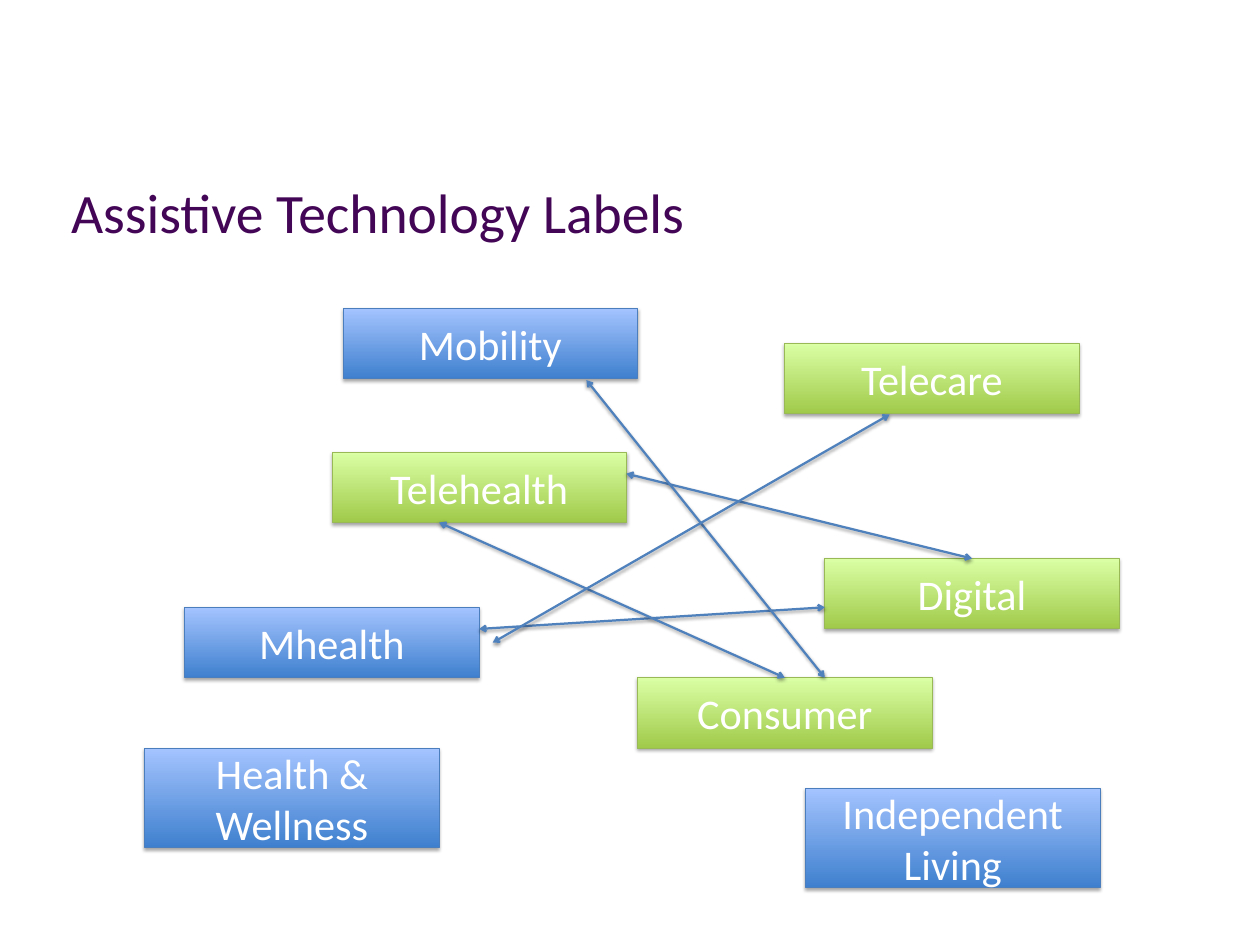
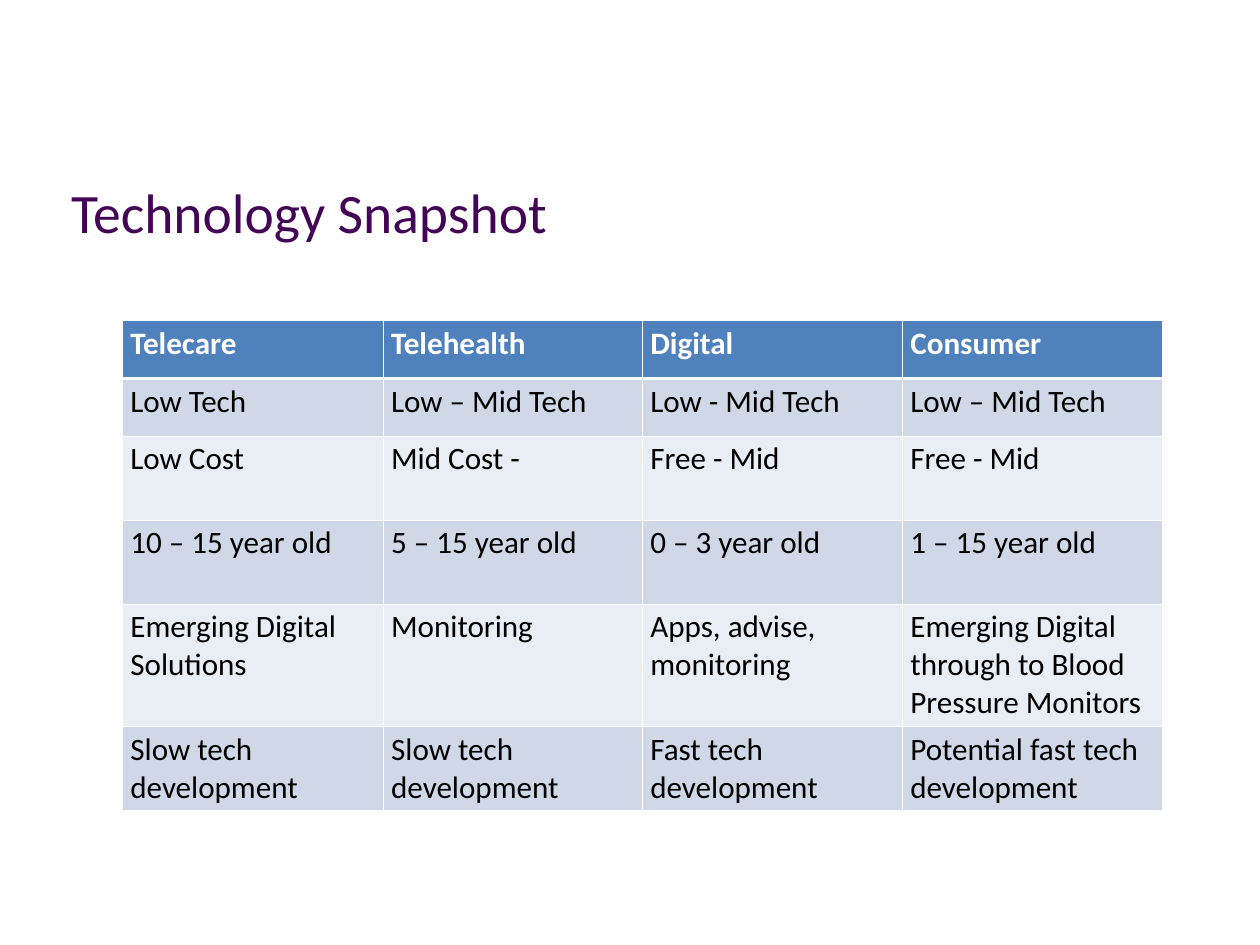
import pptx
import pptx.util
import pptx.dml.color
import pptx.enum.shapes
import pptx.enum.text
import pptx.oxml
import pptx.oxml.ns
from pptx.util import Inches

THEME = {
    "font": "Calibri",
    "title": {"size": 50, "color": "430556", "bold": False},
    "label": {"size": 38, "color": "FFFFFF", "bold": False},
    "header": {"size": 28, "color": "FFFFFF", "bold": True},
    "body": {"size": 28, "color": "000000", "bold": False},
    "blue": {"stops": ("3F80CE", "A4C4FF"), "line": "4B7EBC"},
    "green": {"stops": ("A0CA4A", "DAFFA5"), "line": "98B955"},
    "arrow": "4F81BD",
    "header_fill": "4F81BD",
    "band_fills": ("D0D8E8", "E9EDF4"),
    "border": "FFFFFF",
}

SLIDE_SIZE = (15.75, 11.81)
TITLE_AREA = (0.79, 2.04, 14.17, 1.2)

LABEL_WIDTH = 3.68
ONE_LINE, TWO_LINES = 0.88, 1.24
# text, palette, left, top, height
LABELS = [
    ("Mobility", "blue", 4.29, 3.85, ONE_LINE),
    ("Telecare", "green", 9.81, 4.29, ONE_LINE),
    ("Telehealth", "green", 4.15, 5.65, ONE_LINE),
    ("Digital", "green", 10.31, 6.98, ONE_LINE),
    ("Mhealth", "blue", 2.31, 7.59, ONE_LINE),
    ("Consumer", "green", 7.97, 8.47, ONE_LINE),
    ("Health & Wellness", "blue", 1.81, 9.35, TWO_LINES),
    ("Independent Living", "blue", 10.07, 9.85, TWO_LINES),
]
# start x, start y, end x, end y
ARROWS = [
    (5.99, 7.86, 10.31, 7.59),
    (7.83, 5.92, 12.15, 6.98),
    (5.49, 6.53, 9.81, 8.47),
    (7.33, 4.75, 10.31, 8.47),
    (6.16, 8.03, 11.12, 5.18),
]

TABLE_ORIGIN = (1.53, 4.01)
COLUMN_WIDTHS = (3.26, 3.24, 3.25, 3.25)
ROW_HEIGHTS = (0.72, 0.72, 1.05, 1.05, 1.53, 1.05)
SNAPSHOT = [
    ("Telecare", "Telehealth", "Digital", "Consumer"),
    ("Low Tech", "Low – Mid Tech", "Low - Mid Tech", "Low – Mid Tech"),
    ("Low Cost", "Mid Cost -", "Free - Mid", "Free - Mid"),
    ("10 – 15 year old", "5 – 15 year old", "0 – 3 year old", "1 – 15 year old"),
    ("Emerging Digital Solutions", "Monitoring", "Apps, advise, monitoring",
     "Emerging Digital through to Blood Pressure Monitors"),
    ("Slow tech development", "Slow tech development", "Fast tech development",
     "Potential fast tech development"),
]


def rgb(value):
    return pptx.dml.color.RGBColor.from_string(value)


def add_xml(parent, xml):
    """Append a DrawingML fragment whose first tag lacks its namespace."""
    tag, rest = xml.split(" ", 1)
    namespace = pptx.oxml.ns.nsdecls("a")
    parent.append(pptx.oxml.parse_xml(f"{tag} {namespace} {rest}"))


def write(frame, text, style, align=pptx.enum.text.PP_ALIGN.LEFT):
    frame.word_wrap = True
    para = frame.paragraphs[0]
    para.alignment = align
    span = para.add_run()
    span.text = text
    formats = {"name": THEME["font"], "size": pptx.util.Pt(style["size"]),
               "bold": style["bold"]}
    for name, value in formats.items():
        setattr(span.font, name, value)
    span.font.color.rgb = rgb(style["color"])


def set_line(shape, color, width):
    shape.line.color.rgb = rgb(color)
    shape.line.width = pptx.util.Pt(width)


def add_shadow(shape, opacity, distance):
    """Drop a soft black shadow straight down; call after fill and line."""
    blur, offset = pptx.util.Pt(3.1), pptx.util.Pt(distance)
    add_xml(shape.element.spPr, (
        '<a:effectLst >'
        f'<a:outerShdw blurRad="{blur}" dist="{offset}" dir="5400000" rotWithShape="0">'
        f'<a:srgbClr val="000000"><a:alpha val="{opacity * 1000}"/></a:srgbClr>'
        '</a:outerShdw></a:effectLst>'))


def add_titled_page(deck, title):
    page = deck.slides.add_slide(deck.slide_layouts[6])
    box = page.shapes.add_textbox(*map(Inches, TITLE_AREA))
    box.text_frame.vertical_anchor = pptx.enum.text.MSO_ANCHOR.MIDDLE
    write(box.text_frame, title, THEME["title"])
    return page


def add_label(page, text, palette_name, left, top, height):
    palette = THEME[palette_name]
    area = map(Inches, (left, top, LABEL_WIDTH, height))
    box = page.shapes.add_shape(pptx.enum.shapes.MSO_SHAPE.RECTANGLE, *area)
    box.fill.gradient()
    box.fill.gradient_angle = 90
    for stop, color in zip(box.fill.gradient_stops, palette["stops"]):
        stop.color.rgb = rgb(color)
    set_line(box, palette["line"], 0.75)
    add_shadow(box, 35, 1.8)
    box.text_frame.vertical_anchor = pptx.enum.text.MSO_ANCHOR.MIDDLE
    write(box.text_frame, text, THEME["label"], pptx.enum.text.PP_ALIGN.CENTER)


def add_arrow(page, ends):
    arrow = page.shapes.add_connector(
        pptx.enum.shapes.MSO_CONNECTOR.STRAIGHT, *map(Inches, ends))
    set_line(arrow, THEME["arrow"], 2)
    line = arrow.line._get_or_add_ln()
    for end in ("headEnd", "tailEnd"):
        add_xml(line, f'<a:{end} type="arrow"/>')
    add_shadow(arrow, 38, 1.6)


def add_borders(cell, row):
    """White rules all round, heavier between header and body."""
    widths = {"L": 1, "R": 1, "T": 3 if row == 1 else 1, "B": 3 if row == 0 else 1}
    for side, width in widths.items():
        add_xml(cell._tc.get_or_add_tcPr(), (
            f'<a:ln{side} w="{pptx.util.Pt(width)}"><a:solidFill>'
            f'<a:srgbClr val="{THEME["border"]}"/></a:solidFill></a:ln{side}>'))


def add_snapshot_table(page):
    size = (sum(COLUMN_WIDTHS), sum(ROW_HEIGHTS))
    table = page.shapes.add_table(
        len(SNAPSHOT), len(COLUMN_WIDTHS), *map(Inches, TABLE_ORIGIN + size)).table
    for column, width in zip(table.columns, COLUMN_WIDTHS):
        column.width = Inches(width)
    for row, (texts, height) in enumerate(zip(SNAPSHOT, ROW_HEIGHTS)):
        table.rows[row].height = Inches(height)
        fill = THEME["band_fills"][(row - 1) % 2] if row else THEME["header_fill"]
        for column, text in enumerate(texts):
            cell = table.cell(row, column)
            add_borders(cell, row)
            cell.fill.solid()
            cell.fill.fore_color.rgb = rgb(fill)
            write(cell.text_frame, text, THEME["body" if row else "header"])


def main():
    deck = pptx.Presentation()
    deck.slide_width, deck.slide_height = map(Inches, SLIDE_SIZE)

    page = add_titled_page(deck, "Assistive Technology Labels")
    for label in LABELS:
        add_label(page, *label)
    for ends in ARROWS:
        add_arrow(page, ends)

    add_snapshot_table(add_titled_page(deck, "Technology Snapshot"))
    deck.save("out.pptx")


if __name__ == "__main__":
    main()
